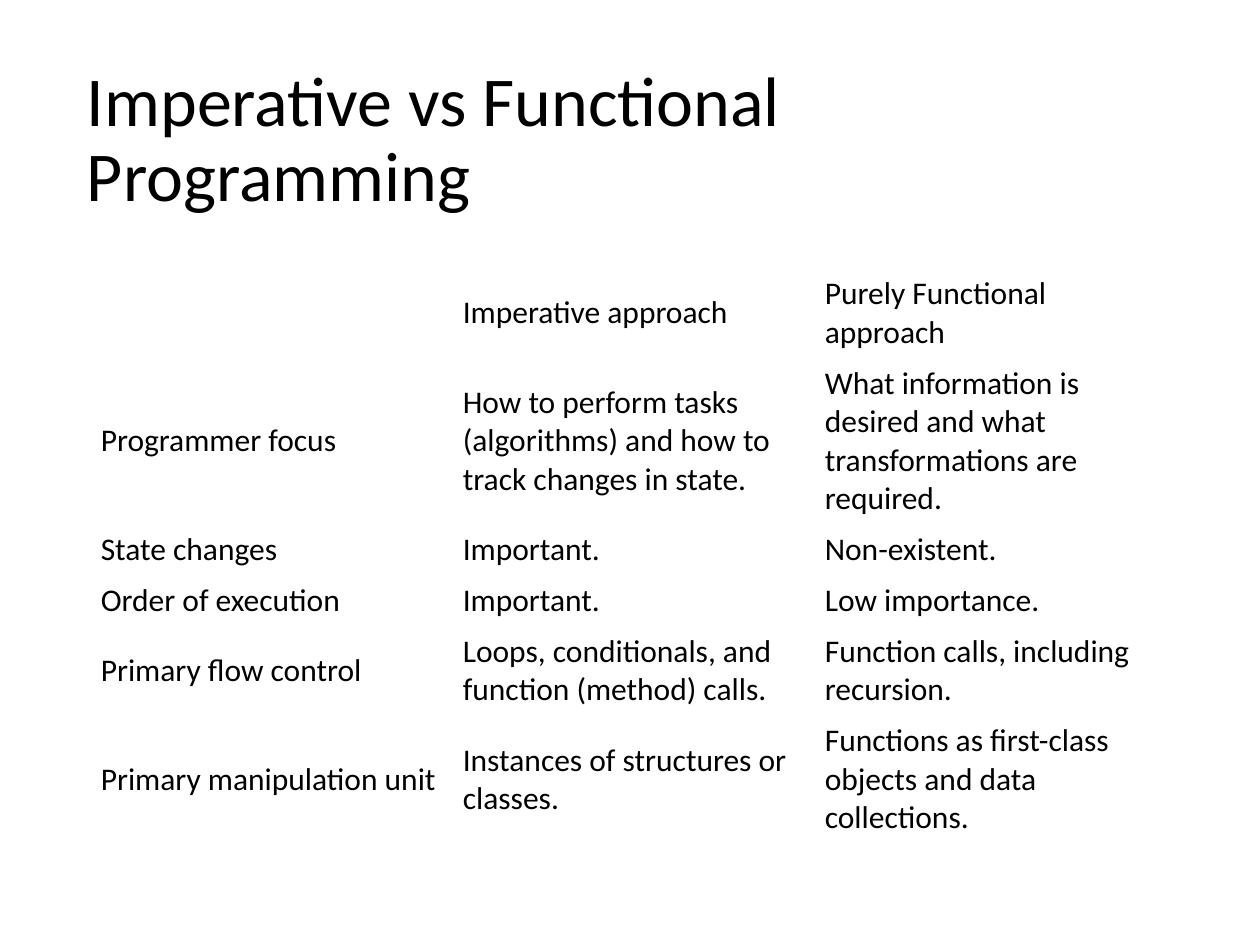
from pptx import Presentation
from pptx.dml.color import RGBColor
from pptx.enum.text import MSO_ANCHOR
from pptx.util import Inches, Pt

MIDDLE = MSO_ANCHOR.MIDDLE
COLORS = {"text": "000000", "background": "FFFFFF"}
WIDTH, HEIGHT = 10, 7.5
LINE_HEIGHT, CELL_PADDING = 0.305, 0.1  # inches, for 18 pt table text

TITLE = ["Imperative vs Functional ", "Programming"]
# Each row: number of text lines in its tallest cell, then the cell texts
ROWS = [
    (2, ["", "Imperative approach", "Purely Functional approach"]),
    (4, ["Programmer focus",
         "How to perform tasks (algorithms) and how to track changes in state.",
         "What information is desired and what transformations are required."]),
    (1, ["State changes", "Important.", "Non-existent."]),
    (1, ["Order of execution", "Important.", "Low importance."]),
    (2, ["Primary flow control",
         "Loops, conditionals, and function (method) calls.",
         "Function calls, including recursion."]),
    (3, ["Primary manipulation unit",
         "Instances of structures or classes.",
         "Functions as first-class objects and data collections."]),
]


class Deck:
    """Holds the style and the current slide; lengths are shares of the slide."""

    font = "Calibri"
    title_size, table_size = 40, 18

    def __init__(self):
        self.prs = Presentation()
        self.prs.slide_width, self.prs.slide_height = Inches(WIDTH), Inches(HEIGHT)
        self.s = self.prs.slides.add_slide(self.prs.slide_layouts[6])
        fill = self.s.background.fill
        fill.solid()
        fill.fore_color.rgb = RGBColor.from_string(COLORS["background"])

    def box(self, x, y, w, h):
        return (Inches(x * WIDTH), Inches(y * HEIGHT),
                Inches(w * WIDTH), Inches(h * HEIGHT))

    def run(self, p, text, size):
        r = p.add_run()
        r.text = text
        r.font.name, r.font.size = self.font, Pt(size)
        r.font.color.rgb = RGBColor.from_string(COLORS["text"])

    def title(self, lines, x, y, w, h):
        tf = self.s.shapes.add_textbox(*self.box(x, y, w, h)).text_frame
        tf.word_wrap, tf.vertical_anchor = True, MIDDLE
        tf.margin_left = tf.margin_right = tf.margin_top = tf.margin_bottom = 0
        p = tf.paragraphs[0]
        p.line_spacing = 0.9
        for i, line in enumerate(lines):
            if i:
                p.add_line_break()
            self.run(p, line, self.title_size)

    def table(self, rows, x, y, w, h):
        """Add an unfilled table whose row heights follow their line counts."""
        columns = len(rows[0][1])
        table = self.s.shapes.add_table(
            len(rows), columns, *self.box(x, y, w, h)).table
        table.first_row = table.horz_banding = False
        for i, (lines, texts) in enumerate(rows):
            table.rows[i].height = Inches(lines * LINE_HEIGHT + CELL_PADDING)
            for j, text in enumerate(texts):
                cell = table.cell(i, j)
                cell.fill.background()
                cell.vertical_anchor = MIDDLE
                if text:
                    self.run(cell.text_frame.paragraphs[0], text, self.table_size)


def main():
    deck = Deck()
    deck.title(TITLE, 0.069, 0.053, 0.862, 0.193)
    deck.table(ROWS, 0.07, 0.284, 0.862, 0.6)
    deck.prs.save("out.pptx")


if __name__ == "__main__":
    main()
